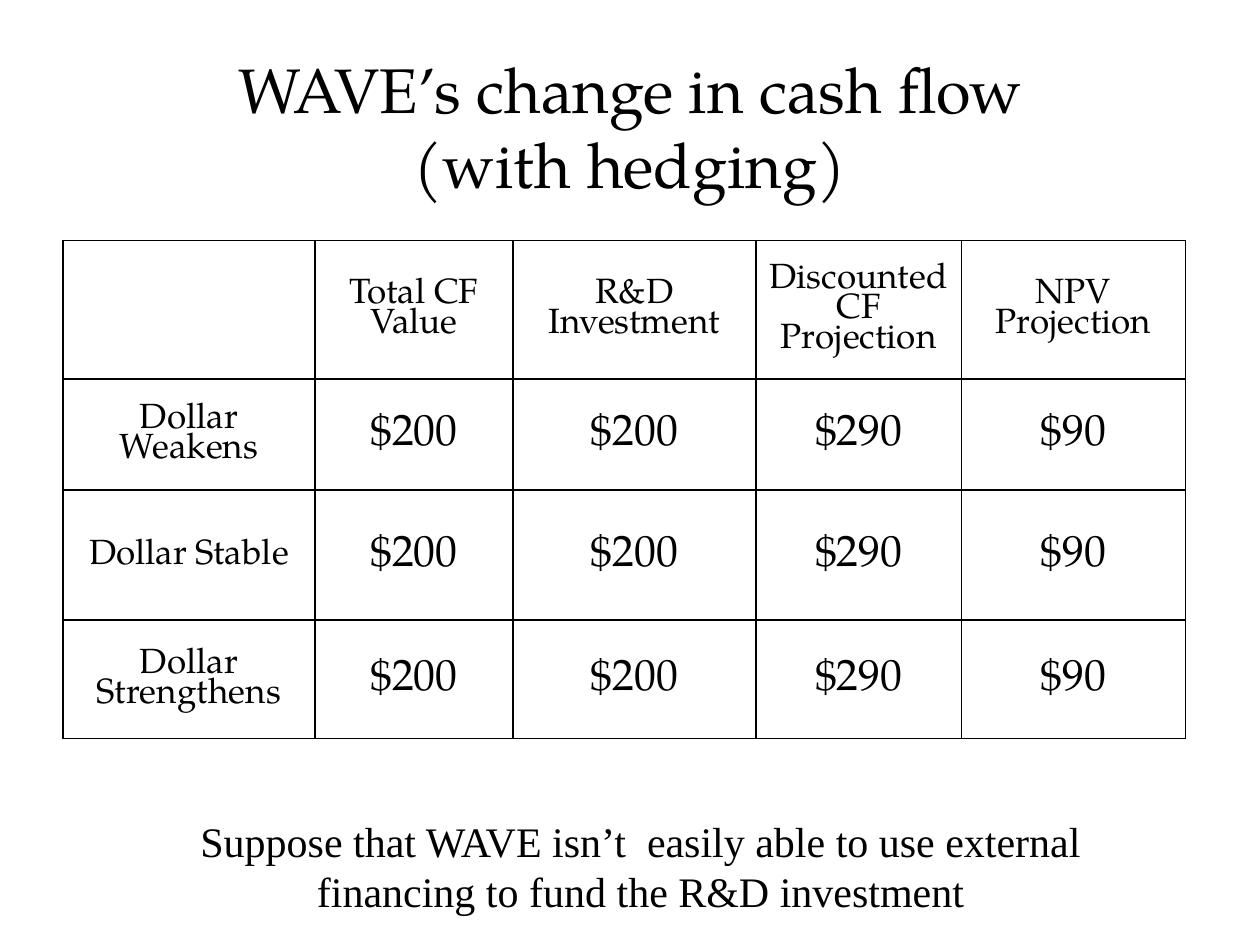
from dataclasses import dataclass

from lxml.etree import SubElement
from pptx import Presentation
from pptx.dml.color import RGBColor
from pptx.enum.text import MSO_ANCHOR as Anchor, PP_ALIGN as Align
from pptx.oxml.ns import qn
from pptx.slide import Slide
from pptx.table import _Cell as Cell
from pptx.text.text import TextFrame
from pptx.util import Cm, Pt

COLORS = {"ink": "000000", "paper": "FFFFFF"}
SERIF = "TeX Gyre Pagella"
BODY = "Times New Roman"

COLUMN_WIDTHS = (5.08, 3.99, 4.9, 4.14, 4.52)
ROW_HEIGHTS = (2.79, 2.24, 2.62, 2.39)
HEADINGS = ("", "Total CF Value", "R&D Investment",
            "Discounted CF Projection", "NPV Projection")
SCENARIOS = ("Dollar Weakens", "Dollar Stable", "Dollar Strengthens")
AMOUNTS = ("$200", "$200", "$290", "$90")


@dataclass(frozen=True)
class Caption:
    lines: tuple[str, ...]
    left: float
    top: float
    width: float
    height: float
    size: int
    font: str
    anchor: Anchor


CAPTIONS = (
    Caption(("WAVE’s change in cash flow", "(with hedging)"),
            1.9, 1.27, 21.6, 2.54, 36, SERIF, Anchor.MIDDLE),
    Caption(("Suppose that WAVE isn’t  easily able to use external "
             "financing to fund the R&D investment",),
            2.54, 16.31, 20.75, 2.31, 24, BODY, Anchor.TOP),
)


def write_centred(frame: TextFrame, lines: tuple[str, ...], size: int,
                  font: str, spacing: float = 1.0) -> None:
    """Fill the first paragraph, with a line break between lines."""
    paragraph = frame.paragraphs[0]
    paragraph.alignment = Align.CENTER
    paragraph.line_spacing = spacing
    for index, line in enumerate(lines):
        if index:
            paragraph.add_line_break()
        run = paragraph.add_run()
        run.text = line
        run.font.size = Pt(size)
        run.font.name = font
        run.font.color.rgb = RGBColor.from_string(COLORS["ink"])


def add_caption(slide: Slide, caption: Caption) -> None:
    box = slide.shapes.add_textbox(Cm(caption.left), Cm(caption.top),
                                   Cm(caption.width), Cm(caption.height))
    frame = box.text_frame
    frame.word_wrap = True
    frame.vertical_anchor = caption.anchor
    write_centred(frame, caption.lines, caption.size, caption.font)


def style_cell(cell: Cell) -> None:
    """Draw all four borders, then clear the fill, as the schema orders them."""
    properties = cell._tc.get_or_add_tcPr()
    for side in ("lnL", "lnR", "lnT", "lnB"):
        border = SubElement(properties, qn(f"a:{side}"), w=str(Pt(1)))
        fill = SubElement(border, qn("a:solidFill"))
        SubElement(fill, qn("a:srgbClr"), val=COLORS["ink"])
    cell.fill.background()
    cell.vertical_anchor = Anchor.MIDDLE


def add_cash_flow_table(slide: Slide) -> None:
    rows = (HEADINGS, *((scenario, *AMOUNTS) for scenario in SCENARIOS))
    table = slide.shapes.add_table(
        len(rows), len(HEADINGS), Cm(1.27), Cm(4.85),
        Cm(sum(COLUMN_WIDTHS)), Cm(sum(ROW_HEIGHTS))).table
    table.first_row = table.horz_banding = False
    for column, width in zip(table.columns, COLUMN_WIDTHS):
        column.width = Cm(width)
    for row, height, texts in zip(table.rows, ROW_HEIGHTS, rows):
        row.height = Cm(height)
        for cell, text in zip(row.cells, texts):
            style_cell(cell)
            if text:
                size = 25 if text in AMOUNTS else 20
                write_centred(cell.text_frame, (text,), size, SERIF, 0.85)


def main() -> None:
    deck = Presentation()
    deck.slide_width, deck.slide_height = Cm(25.4), Cm(19.05)
    slide = deck.slides.add_slide(deck.slide_layouts[6])
    background = slide.background.fill
    background.solid()
    background.fore_color.rgb = RGBColor.from_string(COLORS["paper"])
    for caption in CAPTIONS:
        add_caption(slide, caption)
    add_cash_flow_table(slide)
    deck.save("out.pptx")


if __name__ == "__main__":
    main()
